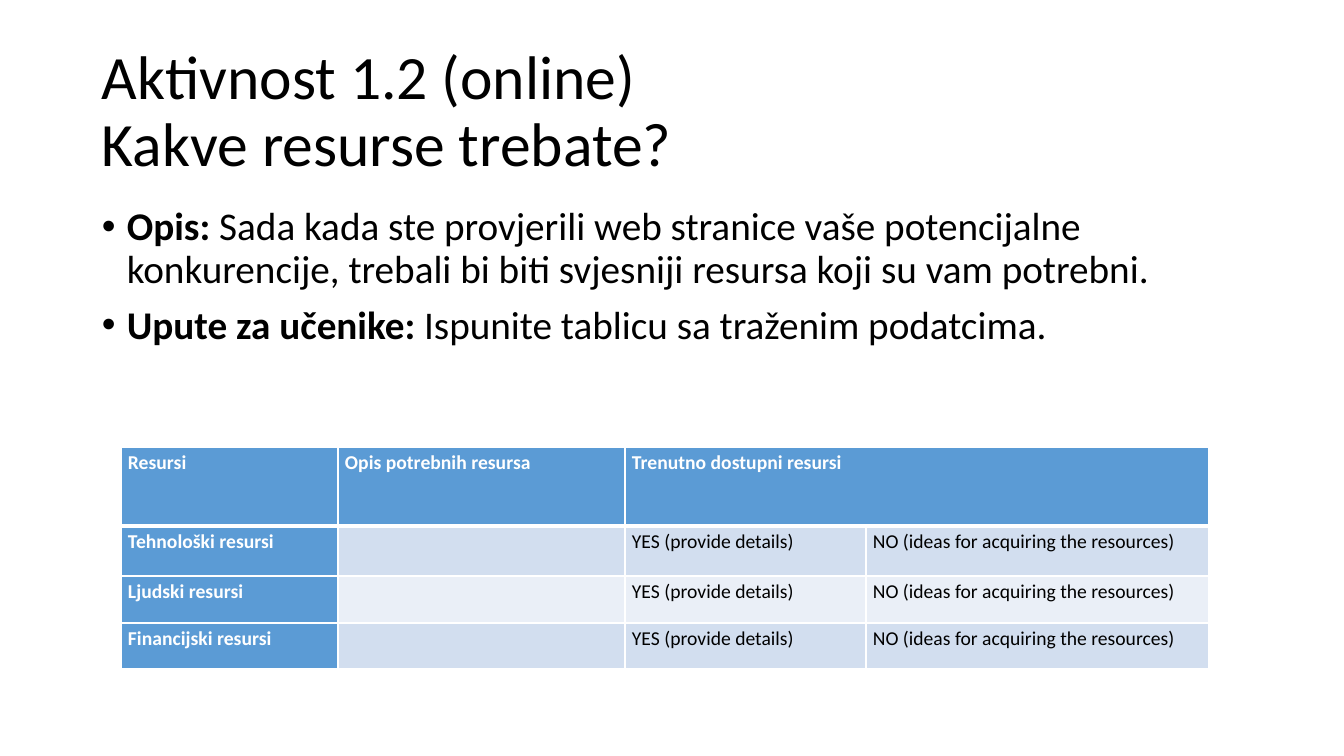
import pptx
import pptx.dml.color
import pptx.enum.text
import pptx.oxml
import pptx.oxml.ns
import pptx.util

SCALE = 914400 / 100.8
BLACK, WHITE, BLUE = "000000", "FFFFFF", "5B9BD5"
BANDS = ["D2DEEF", "EAEFF7"]

TITLE = "Aktivnost 1.2 (online)\nKakve resurse trebate?"
POINTS = [
    ("Opis: ", "Sada kada ste provjerili web stranice vaše potencijalne "
     "konkurencije, trebali bi biti svjesniji resursa koji su vam potrebni."),
    ("Upute za učenike: ", "Ispunite tablicu sa traženim podatcima."),
]
HEAD = ["Resursi", "Opis potrebnih resursa", "Trenutno dostupni resursi", ""]
KINDS = ["Tehnološki resursi", "Ljudski resursi", "Financijski resursi"]
REPLIES = ["", "YES (provide details)", "NO (ideas for acquiring the resources)"]
COLS = [217, 287, 241, 343]
ROWS = [79, 50, 47, 46]


def px(count):
    return pptx.util.Emu(round(count * SCALE))


def color(code):
    return pptx.dml.color.RGBColor.from_string(code)


def style(item, **looks):
    for name, value in looks.items():
        setattr(item, name, value)


def write(para, text, size, code=BLACK, bold=False):
    """Append text to a paragraph, with a line break at each newline."""
    for index, line in enumerate(text.split("\n")):
        if index:
            para.add_line_break()
        run = para.add_run()
        run.text = line
        style(run.font, name="Calibri", size=pptx.util.Pt(size), bold=bold)
        run.font.color.rgb = color(code)


def add_box(slide, left, top, width, height, anchor):
    box = slide.shapes.add_textbox(px(left), px(top), px(width), px(height))
    style(box.text_frame, word_wrap=True, vertical_anchor=anchor)
    return box.text_frame


def add_title(slide):
    frame = add_box(slide, 92, 40, 1160, 146, pptx.enum.text.MSO_ANCHOR.MIDDLE)
    para = frame.paragraphs[0]
    para.line_spacing = 0.9
    write(para, TITLE, 44)


def add_bullet(para):
    props = para._p.get_or_add_pPr()
    props.set("marL", str(px(25)))
    props.set("indent", str(-px(25)))
    for tag, key, value in [("buFont", "typeface", "Arial"),
                            ("buChar", "char", "•")]:
        mark = pptx.oxml.ns.qn(f"a:{tag}")
        props.append(props.makeelement(mark, {key: value}))


def add_points(slide):
    frame = add_box(slide, 92, 202, 1160, 480, pptx.enum.text.MSO_ANCHOR.TOP)
    for index, (label, text) in enumerate(POINTS):
        para = frame.add_paragraph() if index else frame.paragraphs[0]
        style(para, line_spacing=0.9, space_before=pptx.util.Pt(10))
        add_bullet(para)
        write(para, label, 28, bold=True)
        write(para, text, 28)


def add_edges(cell, **widths):
    """Draw white cell borders; widths are points by side (L, R, T, B)."""
    props = cell._tc.get_or_add_tcPr()
    space = pptx.oxml.ns.nsdecls("a")
    for index, (side, width) in enumerate(widths.items()):
        props.insert(index, pptx.oxml.parse_xml(
            f'<a:ln{side} {space} w="{pptx.util.Pt(width)}"><a:solidFill>'
            f'<a:srgbClr val="{WHITE}"/></a:solidFill></a:ln{side}>'))


def fill_cell(cell, text, row, col):
    dark = row == 0 or col == 0
    style(cell, margin_left=px(7), margin_right=px(7),
          margin_top=0, margin_bottom=0)
    cell.fill.solid()
    cell.fill.fore_color.rgb = color(BLUE if dark else BANDS[(row - 1) % 2])
    add_edges(cell, L=1, R=1, T=3 if row == 1 else 1, B=3 if row == 0 else 1)
    if text:
        para = cell.text_frame.paragraphs[0]
        style(para, line_spacing=1.15, space_after=pptx.util.Pt(10))
        write(para, text, 14, WHITE if dark else BLACK, dark)


def add_grid(slide):
    table = slide.shapes.add_table(
        len(ROWS), len(COLS), px(121), px(447),
        px(sum(COLS)), px(sum(ROWS))).table
    for col, width in enumerate(COLS):
        table.columns[col].width = px(width)
    texts = [HEAD] + [[kind] + REPLIES for kind in KINDS]
    for row, height in enumerate(ROWS):
        table.rows[row].height = px(height)
        for col, text in enumerate(texts[row]):
            fill_cell(table.cell(row, col), text, row, col)
    table.cell(0, 2).merge(table.cell(0, 3))


def main():
    deck = pptx.Presentation()
    style(deck, slide_width=px(1344), slide_height=px(756))
    slide = deck.slides.add_slide(deck.slide_layouts[6])
    add_title(slide)
    add_points(slide)
    add_grid(slide)
    deck.save("out.pptx")


if __name__ == "__main__":
    main()
